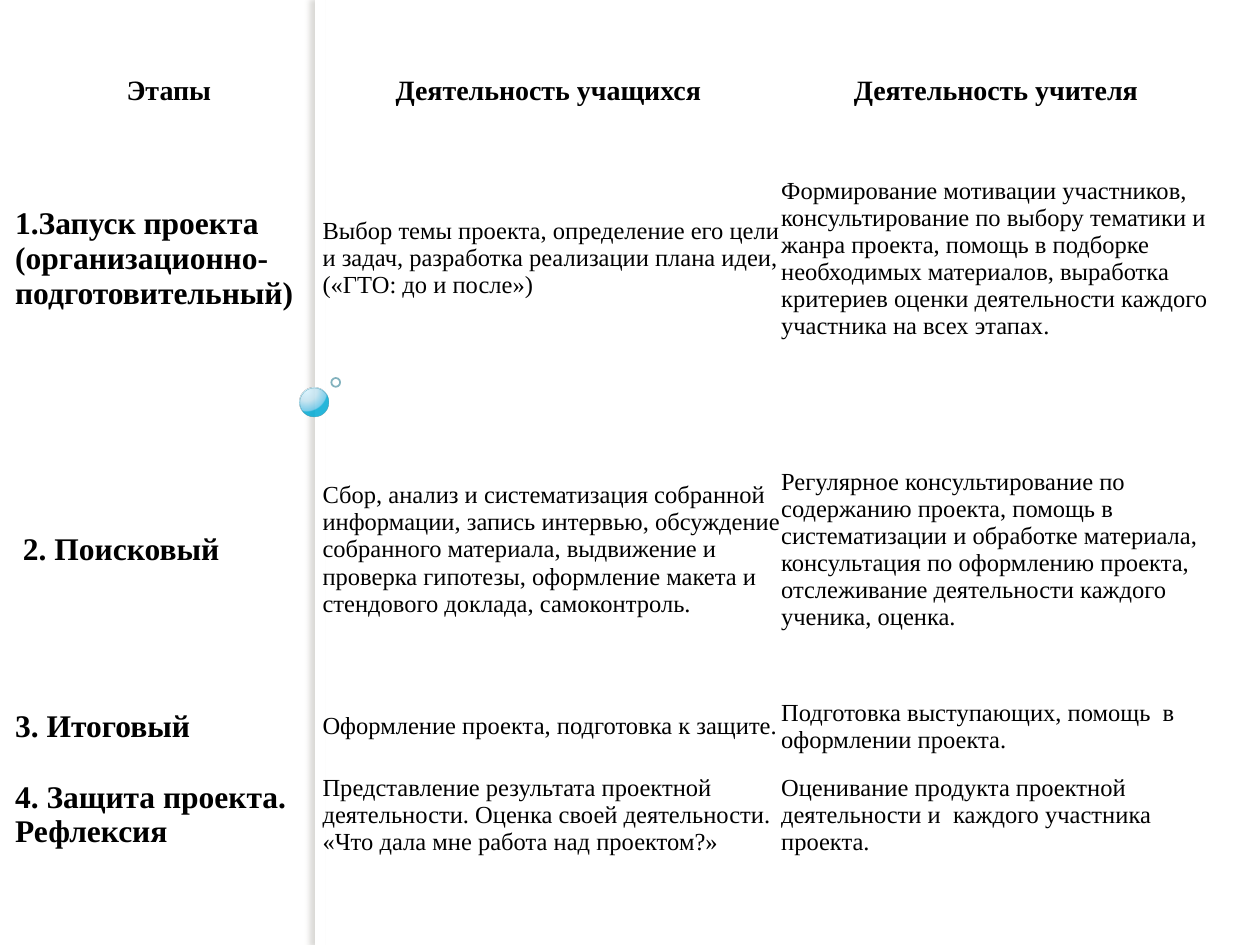
from lxml import etree
from pptx import Presentation
from pptx.dml.color import RGBColor
from pptx.enum.shapes import MSO_SHAPE
from pptx.enum.text import MSO_ANCHOR, PP_ALIGN
from pptx.util import Inches, Pt

RECT, OVAL = MSO_SHAPE.RECTANGLE, MSO_SHAPE.OVAL
CENTER, LEFT, MIDDLE = PP_ALIGN.CENTER, PP_ALIGN.LEFT, MSO_ANCHOR.MIDDLE
NS = "http://schemas.openxmlformats.org/drawingml/2006/main"
NO_GRID_STYLE = "{2D5ABB26-0587-4C30-8999-92F81FD0307C}"

THEME = {
    "font": "Times New Roman",
    "text": RGBColor.from_string("000000"),
    "band": RGBColor.from_string("FFFFFF"),
    "shadow": "736F63",
    "ball": [(0, "DAF4FF", 95), (50, "C3E3F0", 90), (95, "6BC7E8", 88), (100, "00ABD5", 85)],
    "ball_line": RGBColor.from_string("308EA5"),
    "ring_line": RGBColor.from_string("318093"),
    "header": {"size": Pt(16), "bold": True},
    "stage": {"size": Pt(18), "bold": True},
    "body": {"size": Pt(14), "bold": False},
}

prs = Presentation()
prs.slide_width, prs.slide_height = Inches(10), Inches(7.5)
s = prs.slides.add_slide(prs.slide_layouts[6])
U = prs.slide_width // 1000  # the slide is a grid of 1000 columns by 750 rows


def add_part(kind, left, top, width, height):
    sp = s.shapes.add_shape(kind, left * U, top * U, width * U, height * U)
    sp.shadow.inherit = False
    sp.fill.background()
    sp.line.fill.background()
    return sp


def add_xml(parent, body):
    wrapped = etree.fromstring(f'<a:x xmlns:a="{NS}">{body}</a:x>')
    for child in list(wrapped):
        parent.append(child)


# Vertical band with a soft shadow to its left
band = add_part(RECT, 250, 0, 8, 750)
band.fill.solid()
band.fill.fore_color.rgb = THEME["band"]
add_xml(band.shadow._element.find(f"{{{NS}}}effectLst"),
        f'<a:outerShdw blurRad="{Pt(3)}" dist="{Pt(3)}" dir="10800000" algn="tl" rotWithShape="0">'
        f'<a:srgbClr val="{THEME["shadow"]}"><a:alpha val="25000"/></a:srgbClr></a:outerShdw>')

# Glossy ball and small ring on the band
ball = add_part(OVAL, 238, 308, 23, 23)
ring = add_part(OVAL, 263, 300, 7, 7)
for sp, color, width in ((ball, "ball_line", 0.16), (ring, "ring_line", 1)):
    sp.line.color.rgb = THEME[color]
    sp.line.width = Pt(width)
    add_xml(sp.line._ln.find(f".//{{{NS}}}srgbClr"), '<a:alpha val="60000"/>')

ball.fill.gradient()
grad = ball._element.spPr.find(f"{{{NS}}}gradFill")
for child in list(grad):
    grad.remove(child)
stops = "".join(f'<a:gs pos="{pos * 1000}"><a:srgbClr val="{rgb}">'
                f'<a:alpha val="{alpha * 1000}"/></a:srgbClr></a:gs>'
                for pos, rgb, alpha in THEME["ball"])
add_xml(grad, f'<a:gsLst>{stops}</a:gsLst><a:path path="circle">'
              '<a:fillToRect l="25000" t="12000" r="75000" b="88000"/></a:path>')

# Table of stages: a newline starts a new paragraph
ROWS = [
    ("Этапы", "Деятельность учащихся ", "Деятельность учителя  "),
    ("1.Запуск проекта\n(организационно-\nподготовительный)",
     "Выбор темы проекта, определение его цели\n"
     "и задач, разработка реализации плана идеи, («ГТО: до и после»)",
     "Формирование мотивации участников, консультирование по выбору тематики и жанра "
     "проекта, помощь в подборке необходимых материалов, выработка критериев оценки "
     "деятельности каждого участника на всех этапах."),
    (" 2. Поисковый",
     "Сбор, анализ и систематизация собранной информации, запись интервью, обсуждение "
     "собранного материала, выдвижение и проверка гипотезы, оформление макета и "
     "стендового доклада, самоконтроль.",
     "Регулярное консультирование по содержанию проекта, помощь в систематизации и "
     "обработке материала, консультация по оформлению проекта, отслеживание "
     "деятельности каждого ученика, оценка."),
    ("3. Итоговый",
     "Оформление проекта, подготовка к защите.",
     "Подготовка выступающих, помощь  в оформлении проекта."),
    ("4. Защита проекта. Рефлексия",
     "Представление результата проектной деятельности. Оценка своей деятельности. "
     "«Что дала мне работа над проектом?»",
     "Оценивание продукта проектной деятельности и  каждого участника проекта."),
]
COLS = (244, 364, 352)
HEIGHTS = (20, 241, 221, 60, 80)
CELL = {"vertical_anchor": MIDDLE, "margin_left": 0, "margin_right": 0,
        "margin_top": 0, "margin_bottom": 0}

frame = s.shapes.add_table(len(ROWS), len(COLS), 12 * U, 60 * U,
                           sum(COLS) * U, sum(HEIGHTS) * U)
table = frame.table
table.first_row = table.horz_banding = False
table._tbl.tblPr.find(f"{{{NS}}}tableStyleId").text = NO_GRID_STYLE
for column, width in zip(table.columns, COLS):
    column.width = width * U
for row, height in zip(table.rows, HEIGHTS):
    row.height = height * U

for i, texts in enumerate(ROWS):
    for j, text in enumerate(texts):
        cell = table.cell(i, j)
        cell.fill.background()
        for name, value in CELL.items():
            setattr(cell, name, value)
        style = THEME["header" if i == 0 else "stage" if j == 0 else "body"]
        tf = cell.text_frame
        tf.text = text
        for p in tf.paragraphs:
            p.alignment = CENTER if i == 0 else LEFT
            for r in p.runs:
                r.font.name = THEME["font"]
                r.font.color.rgb = THEME["text"]
                for name, value in style.items():
                    setattr(r.font, name, value)

prs.save("out.pptx")
